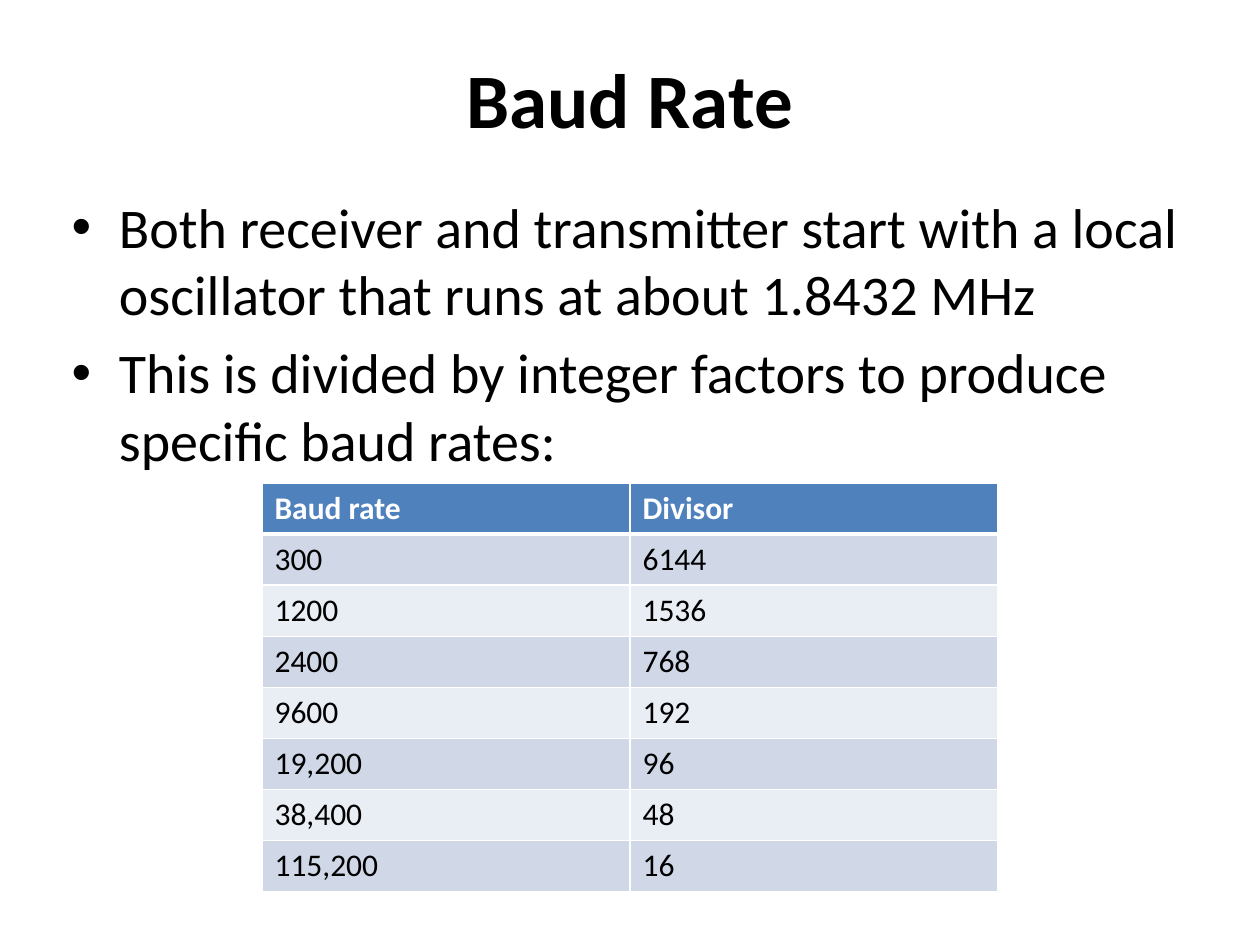
from pptx import Presentation
from pptx.dml.color import RGBColor
from pptx.enum.text import MSO_ANCHOR as Anchor, MSO_AUTO_SIZE as AutoSize, PP_ALIGN as Align
from pptx.oxml import parse_xml
from pptx.oxml.ns import nsdecls
from pptx.util import Emu, Pt

BULLETS = [
    "Both receiver and transmitter start with a local oscillator that runs at about 1.8432 MHz",
    "This is divided by integer factors to produce specific baud rates:",
]
BAUD_ROWS = [
    ("Baud rate", "Divisor"),
    ("300", "6144"),
    ("1200", "1536"),
    ("2400", "768"),
    ("9600", "192"),
    ("19,200", "96"),
    ("38,400", "48"),
    ("115,200", "16"),
]


def px(length):
    return Emu(round(length * 914400 / 126))


def color(value):
    return RGBColor.from_string(value)


class SlideWriter:
    face = "Calibri"
    ink = "000000"
    paper = "FFFFFF"
    header_fill = "4F81BD"
    band_fills = ("E9EDF4", "D0D8E8")

    def __init__(self, deck):
        self.page = deck.slides.add_slide(deck.slide_layouts[1])

    def style(self, para, size, ink, bold=False):
        para.font.name = self.face
        para.font.size = Pt(size)
        para.font.bold = bold
        para.font.color.rgb = color(ink)

    def place(self, box, left, top, width, height):
        box.left, box.top, box.width, box.height = map(px, (left, top, width, height))
        box.text_frame.word_wrap = True
        box.text_frame.auto_size = AutoSize.NONE

    def title(self, text, *area):
        box = self.page.shapes.title
        self.place(box, *area)
        box.text_frame.text = text
        box.text_frame.vertical_anchor = Anchor.MIDDLE
        para = box.text_frame.paragraphs[0]
        para.alignment = Align.CENTER
        self.style(para, 44, self.ink, bold=True)

    def bullets(self, lines, *area):
        box = self.page.placeholders[1]
        self.place(box, *area)
        box.text_frame.text = "\n".join(lines)
        for para in box.text_frame.paragraphs:
            self.style(para, 32, self.ink)

    def borders(self, cell, top, bottom):
        properties = cell._tc.get_or_add_tcPr()
        for side, points in (("L", 1), ("R", 1), ("T", top), ("B", bottom)):
            properties.append(parse_xml(
                f'<a:ln{side} {nsdecls("a")} w="{Pt(points)}"><a:solidFill>'
                f'<a:srgbClr val="{self.paper}"/></a:solidFill></a:ln{side}>'
            ))

    def table(self, rows, left, top, column_width, row_height):
        columns = len(rows[0])
        grid = self.page.shapes.add_table(
            len(rows), columns, px(left), px(top),
            px(column_width * columns), px(row_height * len(rows)),
        ).table
        for column in grid.columns:
            column.width = px(column_width)
        for index, values in enumerate(rows):
            header = index == 0
            grid.rows[index].height = px(row_height)
            for cell, value in zip(grid.rows[index].cells, values):
                cell.text = value
                self.borders(cell, 3 if index == 1 else 1, 3 if header else 1)
                cell.fill.solid()
                cell.fill.fore_color.rgb = color(
                    self.header_fill if header else self.band_fills[index % 2]
                )
                self.style(cell.text_frame.paragraphs[0], 18,
                           self.paper if header else self.ink, bold=header)


def main():
    deck = Presentation()
    deck.slide_width, deck.slide_height = px(1260), px(945)
    writer = SlideWriter(deck)
    writer.title("Baud Rate", 63, 38, 1134, 120)
    writer.bullets(BULLETS, 59, 186, 1134, 634)
    writer.table(BAUD_ROWS, 262, 483, 368, 51)
    deck.save("out.pptx")


if __name__ == "__main__":
    main()
